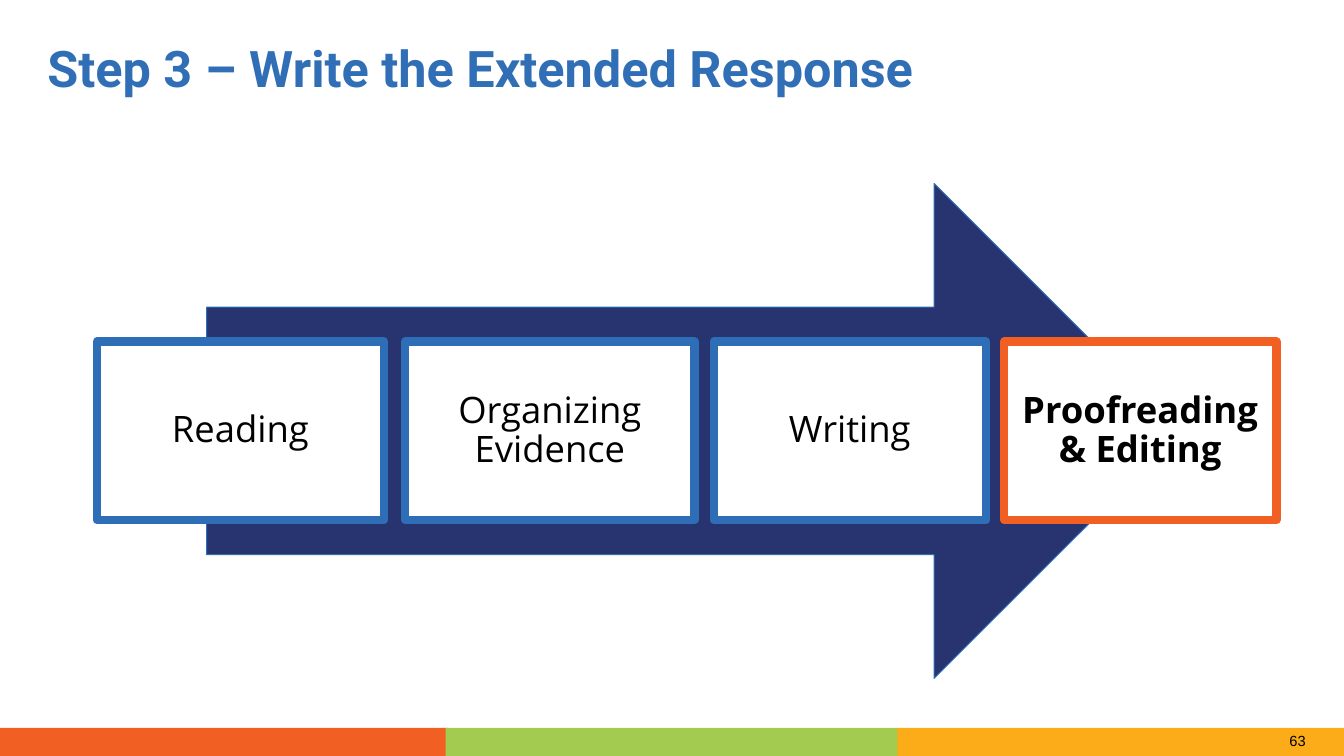
from pptx import Presentation
from pptx.dml.color import RGBColor
from pptx.enum.shapes import MSO_SHAPE as Shape
from pptx.enum.text import MSO_ANCHOR as Anchor, MSO_AUTO_SIZE as AutoSize, PP_ALIGN as Align
from pptx.oxml.ns import qn
from pptx.oxml.xmlchemy import OxmlElement
from pptx.util import Inches, Pt

WHITE = RGBColor(0xFF, 0xFF, 0xFF)
BLACK = RGBColor(0x00, 0x00, 0x00)
TITLE_BLUE = RGBColor(0x30, 0x6E, 0xB6)
BLUE = RGBColor(0x2E, 0x6E, 0xB7)
NAVY = RGBColor(0x27, 0x34, 0x6F)
ORANGE = RGBColor(0xF1, 0x5F, 0x22)
GREEN = RGBColor(0xA2, 0xCB, 0x4F)
AMBER = RGBColor(0xFB, 0xAC, 0x18)


class StepSlide:
    title_font = "Roboto"
    step_font = "Open Sans"
    number_font = "Arial"
    line_spacing = 0.9

    def __init__(self, deck):
        self.slide = deck.slides.add_slide(deck.slide_layouts[5])

    def set_text(self, frame, text, font, size, color, bold=False, align=Align.LEFT, inset=0.0):
        frame.text = text
        frame.word_wrap = True
        frame.auto_size = AutoSize.NONE
        frame.vertical_anchor = Anchor.MIDDLE
        frame.margin_left = frame.margin_right = Inches(inset)
        frame.margin_top = frame.margin_bottom = Inches(inset)
        paragraph = frame.paragraphs[0]
        paragraph.alignment = align
        paragraph.line_spacing = self.line_spacing
        paragraph.font.name = font
        paragraph.font.size = Pt(size)
        paragraph.font.bold = bold
        paragraph.font.color.rgb = color

    def title(self, text, left, top, width, height):
        heading = self.slide.shapes.title
        heading.left, heading.top = Inches(left), Inches(top)
        heading.width, heading.height = Inches(width), Inches(height)
        self.set_text(heading.text_frame, text, self.title_font, 36, TITLE_BLUE, bold=True)

    def shape(self, preset, left, top, width, height, fill, line=None, weight=0.75):
        drawn = self.slide.shapes.add_shape(
            preset, Inches(left), Inches(top), Inches(width), Inches(height))
        drawn.shadow.inherit = False
        drawn.fill.solid()
        drawn.fill.fore_color.rgb = fill
        if line is None:
            drawn.line.fill.background()
        else:
            drawn.line.color.rgb = line
            drawn.line.width = Pt(weight)
        return drawn

    def step(self, text, left, width, line, bold):
        box = self.shape(Shape.RECTANGLE, left, 3.39, width, 1.77, WHITE, line, 6)
        box.element.spPr.find(qn("a:ln")).append(OxmlElement("a:round"))
        self.set_text(box.text_frame, text, self.step_font, 26, BLACK, bold, Align.CENTER, 0.11)

    def page_number(self, text, left, top, width, height):
        number = self.slide.shapes.add_textbox(
            Inches(left), Inches(top), Inches(width), Inches(height))
        self.set_text(number.text_frame, text, self.number_font, 10.5, BLACK)
        number.text_frame.margin_left = Inches(0.1)


def main():
    deck = Presentation()
    deck.slide_width, deck.slide_height = Inches(13.33), Inches(7.5)
    page = StepSlide(deck)

    for left, width, color in ((8.89, 4.44, AMBER), (0, 4.44, ORANGE), (4.42, 4.48, GREEN)):
        page.shape(Shape.RECTANGLE, left, 7.22, width, 0.28, color)
    page.page_number("63", 12.69, 7.22, 0.38, 0.28)

    page.title("Step 3 – Write the Extended Response", 0.47, 0.47, 12.4, 0.47)
    page.shape(Shape.RIGHT_ARROW, 2.05, 1.82, 9.67, 4.91, NAVY, BLUE)

    steps = (
        ("Reading", 0.96, 2.85, BLUE, False),
        ("Organizing Evidence", 4.02, 2.87, BLUE, False),
        ("Writing", 7.08, 2.7, BLUE, False),
        ("Proofreading & Editing", 9.96, 2.7, ORANGE, True),
    )
    for text, left, width, line, bold in steps:
        page.step(text, left, width, line, bold)

    deck.save("out.pptx")


if __name__ == "__main__":
    main()
